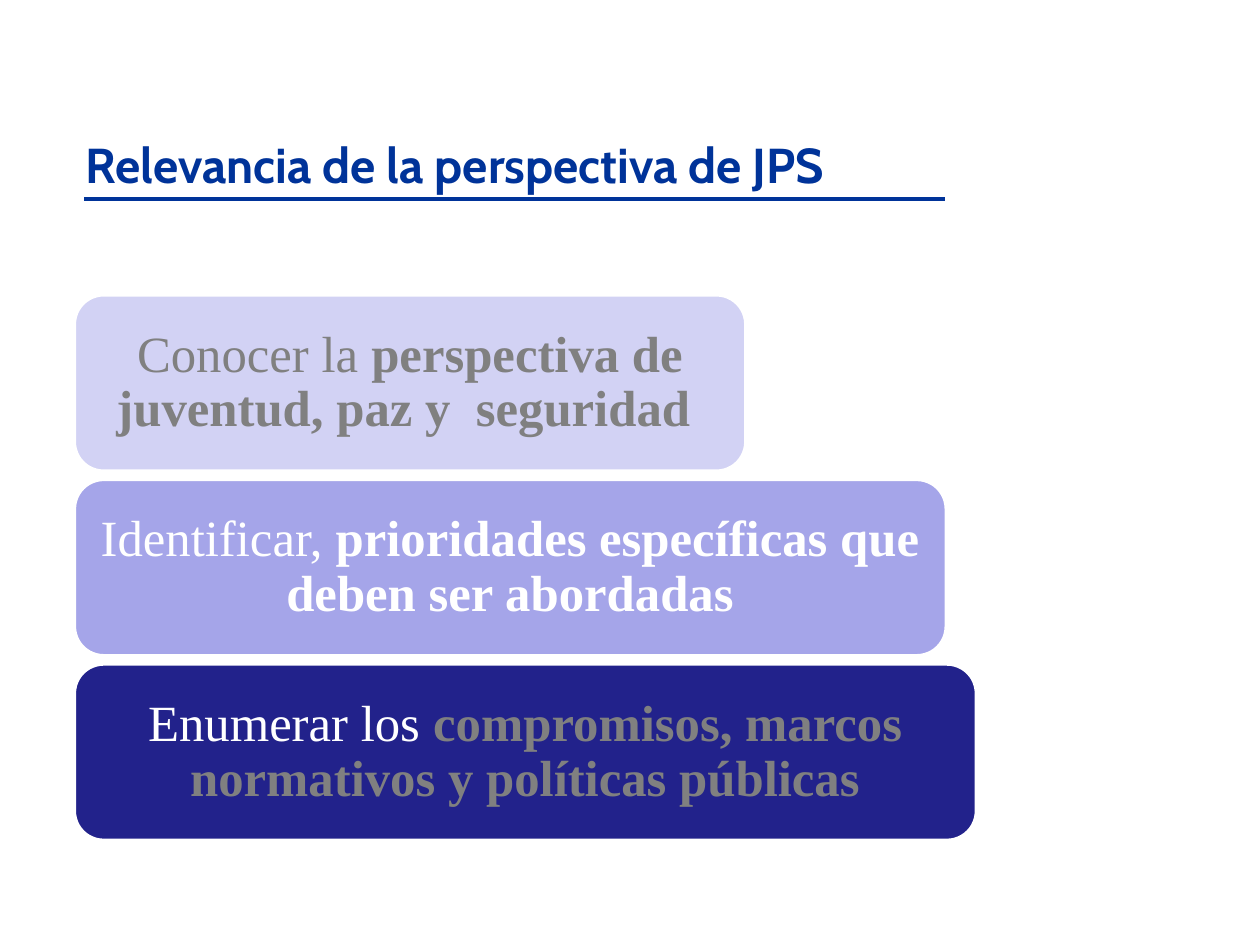
from pptx import Presentation
from pptx.dml.color import RGBColor
from pptx.enum.shapes import MSO_CONNECTOR, MSO_SHAPE
from pptx.enum.text import MSO_ANCHOR, PP_ALIGN
from pptx.oxml.ns import qn
from pptx.util import Inches, Pt
from lxml.etree import SubElement

BLUE, WHITE, GRAY = "003399", "FFFFFF", "808080"
CARD_LEFT, CARD_TOP, CARD_HEIGHT, CARD_PITCH = 0.59, 2.34, 1.4, 1.465

# Width, fill, (plain text, colour), (bold text, colour)
CARDS = [
    (5.33, "D2D2F4", ("Conocer la ", GRAY),
     ("perspectiva de juventud, paz y  seguridad ", GRAY)),
    (6.92, "A5A5E9", ("Identificar, ", WHITE),
     ("prioridades específicas que deben ser abordadas", WHITE)),
    (7.16, "22228B", ("Enumerar los ", WHITE),
     ("compromisos, marcos normativos y políticas públicas", GRAY)),
]


def color(value):
    return RGBColor.from_string(value)


def style_font(font, name, size, value, bold):
    font.name = name
    font.size = Pt(size)
    font.color.rgb = color(value)
    font.bold = bold


def set_title(page, text):
    title = page.shapes.title
    title.left, title.top = Inches(0.58), Inches(1.02)
    title.width, title.height = Inches(7.17), Inches(0.57)
    frame = title.text_frame
    frame.text = text
    frame.word_wrap = True
    frame.vertical_anchor = MSO_ANCHOR.TOP
    para = frame.paragraphs[0]
    para.alignment = PP_ALIGN.LEFT
    style_font(para.runs[0].font, "Cabin", 28, BLUE, True)


def add_rule(page, left, right, top):
    rule = page.shapes.add_connector(
        MSO_CONNECTOR.STRAIGHT,
        Inches(left), Inches(top), Inches(right), Inches(top))
    rule.line.color.rgb = color(BLUE)
    rule.line.width = Pt(2)
    SubElement(rule._element.spPr, qn("a:effectLst"))


def add_card(page, top, width, fill, plain, strong):
    card = page.shapes.add_shape(
        MSO_SHAPE.ROUNDED_RECTANGLE, Inches(CARD_LEFT), Inches(top),
        Inches(width), Inches(CARD_HEIGHT))
    card.shadow.inherit = False
    card.fill.solid()
    card.fill.fore_color.rgb = color(fill)
    card.line.color.rgb = color(WHITE)
    card.line.width = Pt(2)

    frame = card.text_frame
    frame.word_wrap = True
    frame.vertical_anchor = MSO_ANCHOR.MIDDLE
    frame.margin_left = frame.margin_right = Inches(0.12)
    frame.margin_top = frame.margin_bottom = Inches(0.06)
    para = frame.paragraphs[0]
    para.alignment = PP_ALIGN.CENTER
    para.line_spacing = 0.9
    for (text, value), bold in ((plain, False), (strong, True)):
        span = para.add_run()
        span.text = text
        style_font(span.font, "Times New Roman", 29, value, bold)


def main():
    deck = Presentation()
    deck.slide_width, deck.slide_height = Inches(10), Inches(7.5)
    page = deck.slides.add_slide(deck.slide_layouts[5])

    # Heading
    set_title(page, "Relevancia de la perspectiva de JPS")
    add_rule(page, 0.67, 7.5, 1.58)

    # Widening stack of objectives
    for index, card in enumerate(CARDS):
        add_card(page, CARD_TOP + index * CARD_PITCH, *card)

    deck.save("out.pptx")


if __name__ == "__main__":
    main()
